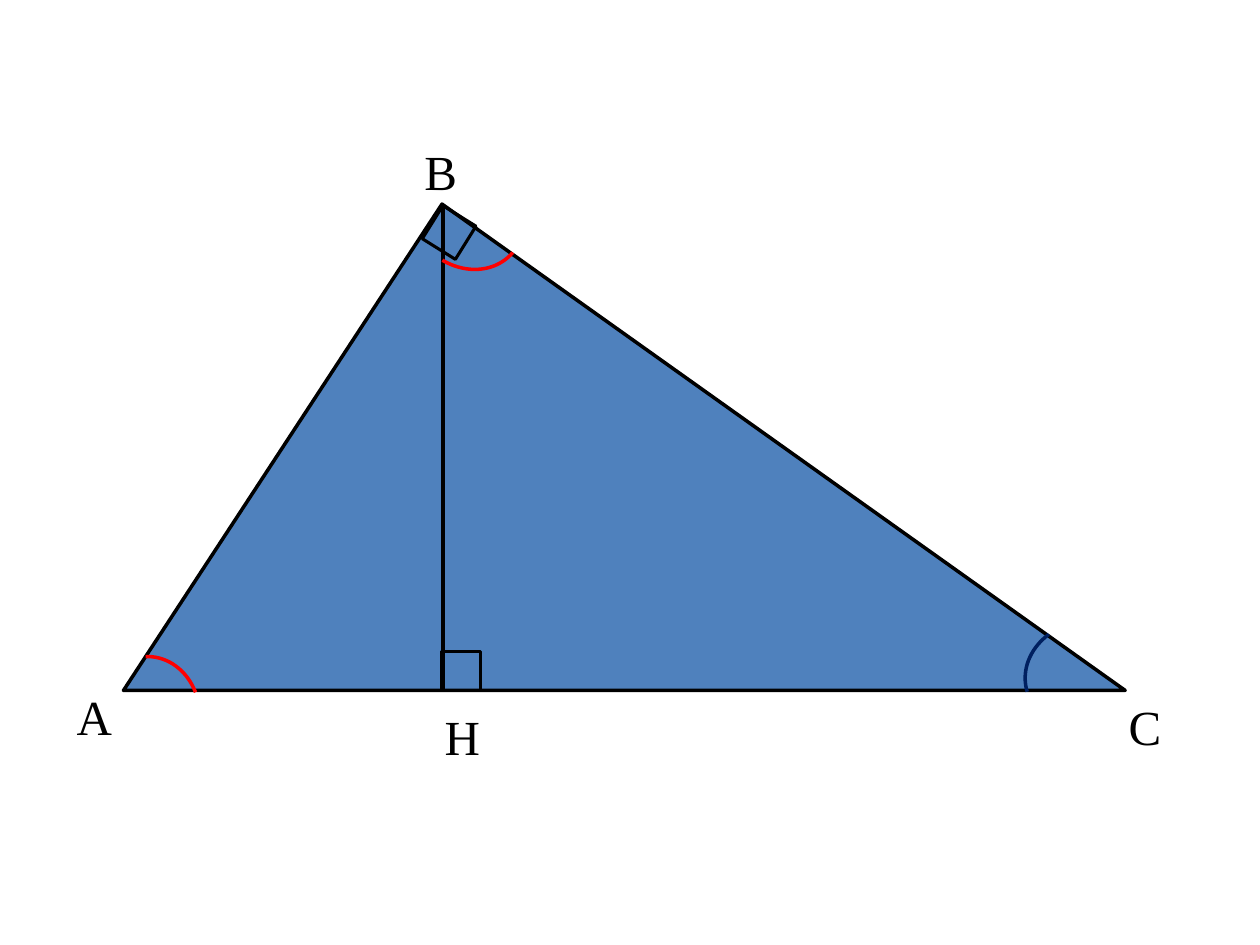
from dataclasses import dataclass

from lxml.etree import SubElement
from pptx import Presentation
from pptx.dml.color import RGBColor
from pptx.enum.shapes import MSO_CONNECTOR, MSO_SHAPE
from pptx.enum.text import MSO_AUTO_SIZE
from pptx.oxml.ns import qn
from pptx.shapes.autoshape import Shape
from pptx.slide import Slide
from pptx.util import Pt

BLACK = RGBColor(0x00, 0x00, 0x00)
BLUE = RGBColor(0x4F, 0x81, 0xBD)
NAVY = RGBColor(0x00, 0x20, 0x60)
RED = RGBColor(0xFF, 0x00, 0x00)

LEFT, TOP, WIDTH, HEIGHT = 70.56, 116.64, 572.4, 277.92
APEX_RATIO = 0.318
ALTITUDE_X = 253.3
BASE_Y = TOP + HEIGHT


@dataclass(frozen=True)
class RightAngle:
    x: float
    y: float
    rotation: float = 0
    side: float = 22.3


@dataclass(frozen=True)
class AngleArc:
    x: float
    y: float
    rotation: float
    color: RGBColor
    end: float = 194.57
    start: float = 158.46
    width: float = 62.64
    height: float = 73.44


@dataclass(frozen=True)
class Label:
    text: str
    x: float
    y: float
    width: float = 59.76
    height: float = 41.2


RIGHT_ANGLES = [RightAngle(245.5, 121.7, 31.9), RightAngle(252.2, 372.2)]
LABELS = [
    Label("A", 36.72, 388.8),
    Label("B", 235.44, 77.04),
    Label("C", 637.92, 394.56),
    Label("H", 246.96, 400.32),
]
ARCS = [
    AngleArc(591.12, 349.2, 261.1, NAVY),
    AngleArc(51.84, 375.12, 6.1, RED),
    AngleArc(234.72, 82.8, 138.5, RED, end=201.53),
]


def add_outline(s: Slide, kind: MSO_SHAPE, x: float, y: float, width: float,
                height: float, *, color: RGBColor = BLACK, weight: float = 2,
                rotation: float = 0) -> Shape:
    sp = s.shapes.add_shape(kind, Pt(x), Pt(y), Pt(width), Pt(height))
    sp.shadow.inherit = False
    sp.rotation = rotation
    sp.fill.background()
    sp.line.color.rgb = color
    sp.line.width = Pt(weight)
    return sp


def add_triangle(s: Slide) -> None:
    sp = add_outline(s, MSO_SHAPE.ISOSCELES_TRIANGLE, LEFT, TOP, WIDTH, HEIGHT)
    sp.adjustments[0] = APEX_RATIO
    sp.fill.solid()
    sp.fill.fore_color.rgb = BLUE


def add_altitude(s: Slide) -> None:
    line = s.shapes.add_connector(MSO_CONNECTOR.STRAIGHT, Pt(ALTITUDE_X), Pt(TOP),
                                  Pt(ALTITUDE_X), Pt(BASE_Y))
    line.line.color.rgb = BLACK
    line.line.width = Pt(2)
    SubElement(line._element.spPr, qn("a:effectLst"))


def add_right_angle(s: Slide, mark: RightAngle) -> None:
    add_outline(s, MSO_SHAPE.RECTANGLE, mark.x, mark.y, mark.side, mark.side,
                weight=1.75, rotation=mark.rotation)


def add_arc(s: Slide, arc: AngleArc) -> None:
    sp = add_outline(s, MSO_SHAPE.ARC, arc.x, arc.y, arc.width, arc.height,
                     color=arc.color, rotation=arc.rotation)
    sp.adjustments[0] = arc.start
    sp.adjustments[1] = arc.end


def add_text(s: Slide, text: str, *, x: float, y: float, width: float, height: float,
             size: float = 28, font: str = "Times New Roman",
             color: RGBColor = BLACK) -> None:
    tf = s.shapes.add_textbox(Pt(x), Pt(y), Pt(width), Pt(height)).text_frame
    tf.word_wrap = True
    tf.auto_size = MSO_AUTO_SIZE.SHAPE_TO_FIT_TEXT
    r = tf.paragraphs[0].add_run()
    r.text = text
    r.font.size = Pt(size)
    r.font.name = font
    r.font.color.rgb = color


def main() -> None:
    prs = Presentation()
    prs.slide_width, prs.slide_height = Pt(720), Pt(540)
    s = prs.slides.add_slide(prs.slide_layouts[6])
    add_triangle(s)
    add_altitude(s)
    for mark in RIGHT_ANGLES:
        add_right_angle(s, mark)
    for label in LABELS:
        add_text(s, label.text, x=label.x, y=label.y,
                 width=label.width, height=label.height)
    for arc in ARCS:
        add_arc(s, arc)
    prs.save("out.pptx")


if __name__ == "__main__":
    main()
